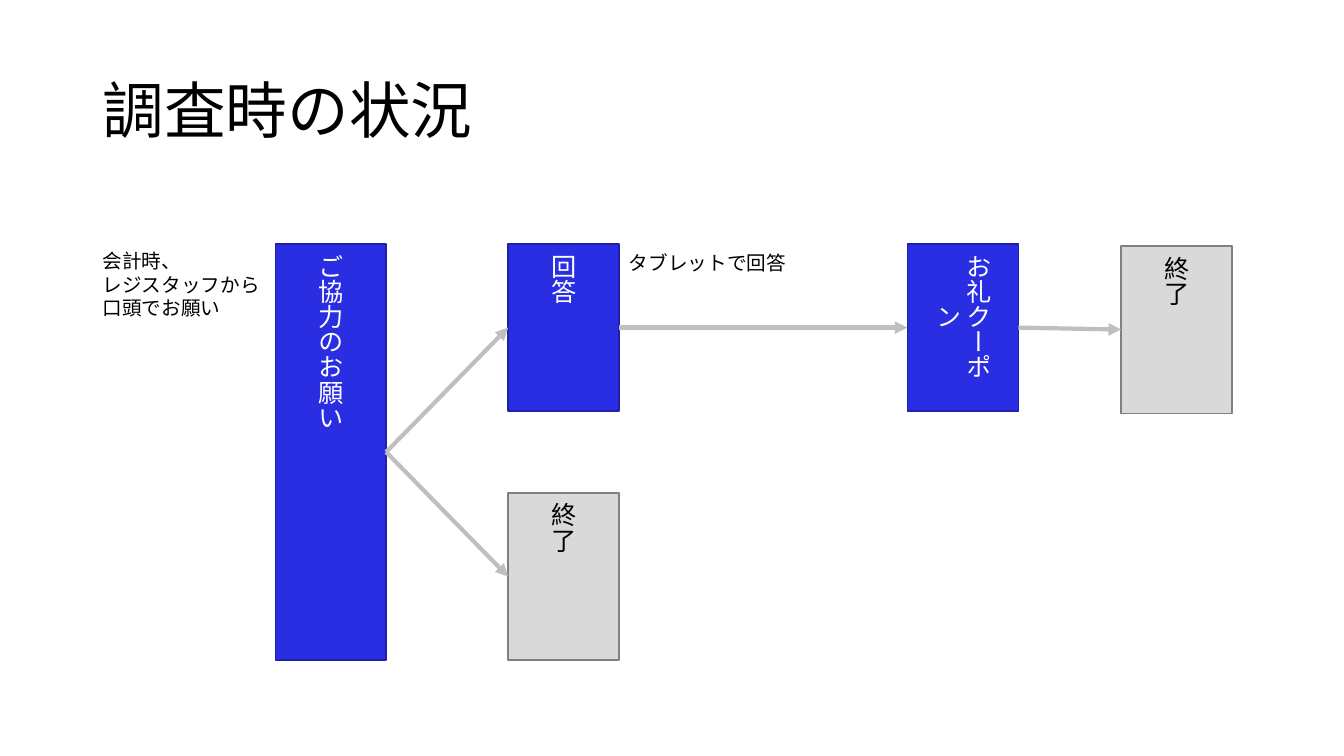
"""Build the survey flow slide."""
from dataclasses import dataclass
from typing import Any

from pptx import Presentation
from pptx.dml.color import RGBColor
from pptx.enum.shapes import MSO_CONNECTOR as Conn, MSO_SHAPE as Geo
from pptx.enum.text import MSO_ANCHOR as Anchor, MSO_AUTO_SIZE as Fit, PP_ALIGN as Align
from pptx.oxml.ns import qn
from pptx.util import Pt

PX = 9144
RIGHT, LEFT = 3, 1


@dataclass(frozen=True)
class Theme:
    font: str = "Noto Sans CJK JP"
    black: str = "000000"
    white: str = "FFFFFF"
    blue: str = "2A2EE3"
    navy: str = "1F22A8"
    pale: str = "D9D9D9"
    gray: str = "808080"
    arrow: str = "BFBFBF"
    title: int = 44
    step: int = 18
    note: int = 14


@dataclass(frozen=True)
class Step:
    text: str
    x: int
    y: int
    h: int = 166
    w: int = 110
    end: bool = False


@dataclass(frozen=True)
class Note:
    text: str
    x: int
    y: int
    w: int
    h: int


THEME = Theme()
STEPS = {
    "ask": Step("ご協力のお願い", 273, 242, h=413),
    "answer": Step("回答", 504, 242),
    "refuse": Step("終了", 504, 489, end=True),
    "coupon": Step("お礼クーポン", 900, 242),
    "finish": Step("終了", 1112, 244, end=True),
}
LINKS = [("ask", "answer"), ("ask", "refuse"), ("answer", "coupon"), ("coupon", "finish")]
TITLE = Note("調査時の状況", 92, 40, 1150, 145)
NOTES = [
    Note("会計時、\nレジスタッフから口頭でお願い", 92, 242, 179, 81),
    Note("タブレットで回答", 614, 244, 224, 34),
]


def rgb(code: str) -> RGBColor:
    return RGBColor.from_string(code)


def write(shape: Any, text: str, *, size: int, color: str = THEME.black,
          align: Align = Align.LEFT, anchor: Anchor = Anchor.TOP,
          space: float = 1.0, fit: Fit = Fit.NONE) -> None:
    frame = shape.text_frame
    frame.text = text
    frame.word_wrap = True
    frame.auto_size = fit
    frame.vertical_anchor = anchor
    for para in frame.paragraphs:
        para.alignment = align
        para.line_spacing = space
        for run in para.runs:
            font = run.font
            font.name, font.size = THEME.font, Pt(size)
            font.color.rgb = rgb(color)
            east = font._element.makeelement(qn("a:ea"), {"typeface": THEME.font})
            font._element.find(qn("a:latin")).addnext(east)


def place(item: Step | Note) -> list[int]:
    return [n * PX for n in (item.x, item.y, item.w, item.h)]


def draw_step(shapes: Any, step: Step) -> Any:
    fill, line, ink = ((THEME.pale, THEME.gray, THEME.black) if step.end
                       else (THEME.blue, THEME.navy, THEME.white))
    box = shapes.add_shape(Geo.RECTANGLE, *place(step))
    box.shadow.inherit = False
    box.fill.solid()
    box.fill.fore_color.rgb = rgb(fill)
    box.line.color.rgb = rgb(line)
    box.line.width = Pt(1)
    write(box, step.text, size=THEME.step, color=ink,
          align=Align.CENTER, anchor=Anchor.MIDDLE)
    box.text_frame._txBody.bodyPr.set("vert", "eaVert")
    return box


def draw_link(shapes: Any, start: Any, stop: Any) -> None:
    link = shapes.add_connector(Conn.STRAIGHT, 0, 0, 0, 0)
    link.begin_connect(start, RIGHT)
    link.end_connect(stop, LEFT)
    link.line.color.rgb = rgb(THEME.arrow)
    link.line.width = Pt(3)
    line = link.line._get_or_add_ln()
    line.append(line.makeelement(qn("a:tailEnd"), {"type": "triangle"}))
    props = link._element.spPr
    props.append(props.makeelement(qn("a:effectLst"), {}))


def main() -> None:
    deck = Presentation()
    deck.slide_width, deck.slide_height = 1333 * PX, 750 * PX
    shapes = deck.slides.add_slide(deck.slide_layouts[6]).shapes
    write(shapes.add_textbox(*place(TITLE)), TITLE.text, size=THEME.title,
          anchor=Anchor.MIDDLE, space=0.9)
    boxes = {key: draw_step(shapes, step) for key, step in STEPS.items()}
    for note in NOTES:
        write(shapes.add_textbox(*place(note)), note.text, size=THEME.note,
              fit=Fit.SHAPE_TO_FIT_TEXT)
    for start, stop in LINKS:
        draw_link(shapes, boxes[start], boxes[stop])
    deck.save("out.pptx")


if __name__ == "__main__":
    main()
